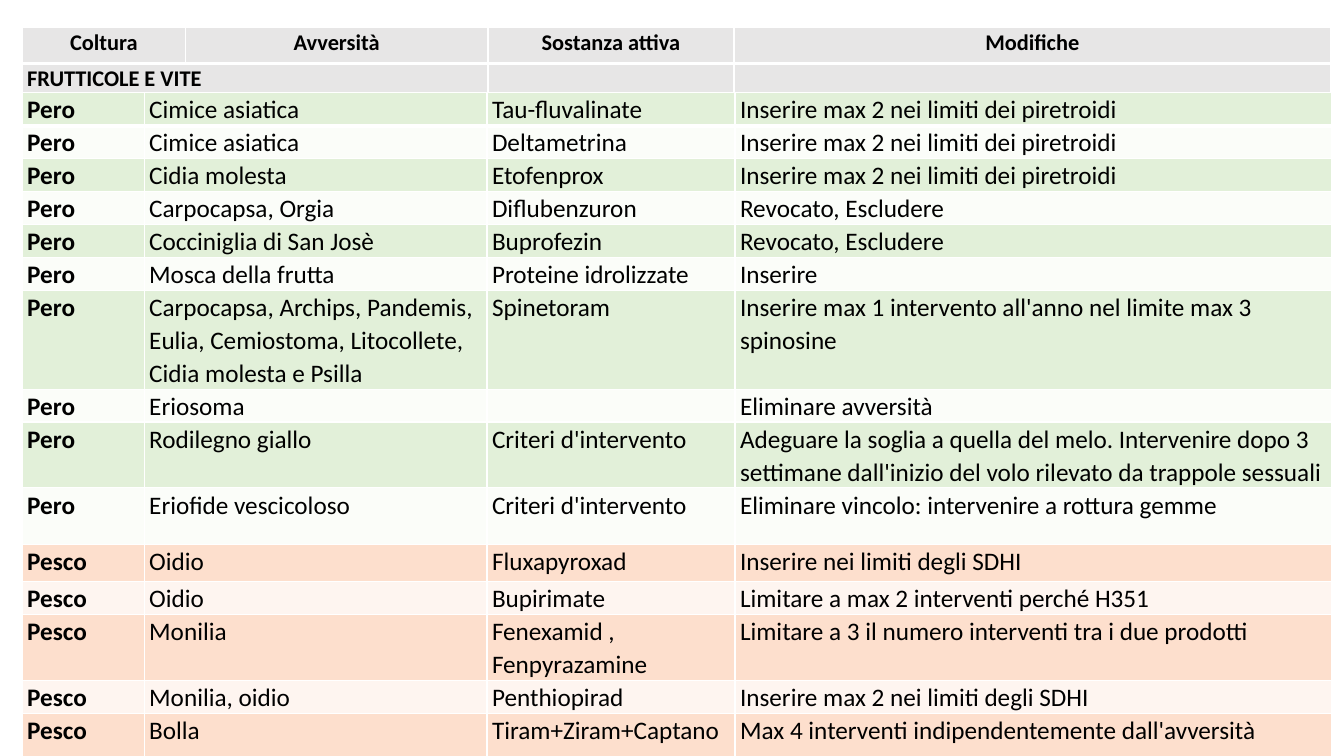
from lxml import etree
from pptx import Presentation
from pptx.dml.color import RGBColor
from pptx.enum.text import MSO_ANCHOR as Anchor, PP_ALIGN as Align
from pptx.oxml.ns import qn
from pptx.util import Inches, Pt

BLACK = RGBColor(0x00, 0x00, 0x00)
WHITE = RGBColor(0xFF, 0xFF, 0xFF)
GREY = RGBColor(0xE7, 0xE6, 0xE6)
# Dark and light band of each crop
BANDS = {
    "Pero": (RGBColor(0xE2, 0xF0, 0xD9), RGBColor(0xFB, 0xFD, 0xF9)),
    "Pesco": (RGBColor(0xFD, 0xDF, 0xCD), RGBColor(0xFE, 0xF5, 0xF0)),
}
FONT = "Calibri"

HEAD = [
    ("Coltura", "Avversità", "Sostanza attiva", "Modifiche"),
    ("FRUTTICOLE E VITE", "", "", ""),
]
HEAD_COLS = [1.62, 3, 2.44, 5.92]
HEAD_ROWS = [0.36, 0.24]

PYR = "Inserire max 2 nei limiti dei piretroidi"
OUT = "Revocato, Escludere"
RULE = "Criteri d'intervento"
# Row height, pest, active substance, change
CROPS = {
    "Pero": [
        (0.26, "Cimice asiatica", "Tau-fluvalinate", PYR),
        (0.26, "Cimice asiatica", "Deltametrina", PYR),
        (0.26, "Cidia molesta", "Etofenprox", PYR),
        (0.26, "Carpocapsa, Orgia", "Diflubenzuron", OUT),
        (0.26, "Cocciniglia di San Josè", "Buprofezin", OUT),
        (0.26, "Mosca della frutta", "Proteine idrolizzate", "Inserire"),
        (0.41, "Carpocapsa, Archips, Pandemis, Eulia, Cemiostoma, "
         "Litocollete, Cidia molesta e Psilla", "Spinetoram",
         "Inserire max 1 intervento all'anno nel limite max 3 spinosine"),
        (0.26, "Eriosoma", "", "Eliminare avversità"),
        (0.56, "Rodilegno giallo", RULE,
         "Adeguare la soglia a quella del melo. Intervenire dopo 3 settimane "
         "dall'inizio del volo rilevato da trappole sessuali"),
        (0.56, "Eriofide vescicoloso", RULE,
         "Eliminare vincolo: intervenire a rottura gemme"),
    ],
    "Pesco": [
        (0.37, "Oidio", "Fluxapyroxad", "Inserire nei limiti degli SDHI"),
        (0.26, "Oidio", "Bupirimate", "Limitare a max 2 interventi perché H351"),
        (0.5, "Monilia", "Fenexamid , Fenpyrazamine",
         "Limitare a 3 il numero interventi tra i due prodotti"),
        (0.26, "Monilia, oidio", "Penthiopirad",
         "Inserire max 2 nei limiti degli SDHI"),
        (0.5, "Bolla", "Tiram+Ziram+Captano",
         "Max 4 interventi indipendentemente dall'avversità"),
    ],
}
CROP_COLS = [1.21, 3.4, 2.46, 5.92]


def add_lines(cell, base):
    """Draw white edges; base is the width of the bottom one."""
    props = cell._tc.get_or_add_tcPr()
    for i, (side, width) in enumerate(zip("LRTB", (1, 1, 1, base))):
        line = etree.Element(qn(f"a:ln{side}"), w=str(Pt(width)))
        fill = etree.SubElement(line, qn("a:solidFill"))
        etree.SubElement(fill, qn("a:srgbClr"), val=str(WHITE))
        props.insert(i, line)


def set_cell(cell, text, fill, size, bold, base):
    cell.fill.solid()
    cell.fill.fore_color.rgb = fill
    add_lines(cell, base)
    cell.margin_left = cell.margin_right = Inches(0.05)
    cell.margin_top = cell.margin_bottom = 0
    para = cell.text_frame.paragraphs[0]
    para.text = text
    para.line_spacing = 1.07
    for run in para.runs:
        font = run.font
        font.name, font.size, font.bold = FONT, Pt(size), bold
        font.color.rgb = BLACK
    if not text:
        # Keep an empty cell as low as its row
        etree.SubElement(para._p, qn("a:endParaRPr"), sz=str(size * 100))


def add_grid(slide, left, top, cols, rows):
    frame = slide.shapes.add_table(
        len(rows), len(cols), Inches(left), Inches(top),
        Inches(sum(cols)), Inches(sum(rows)))
    table = frame.table
    table.first_row = table.horz_banding = False
    for col, width in zip(table.columns, cols):
        col.width = Inches(width)
    for row, height in zip(table.rows, rows):
        row.height = Inches(height)
    return table


def add_head(slide, left, top):
    table = add_grid(slide, left, top, HEAD_COLS, HEAD_ROWS)
    for r, row in enumerate(HEAD):
        for c, text in enumerate(row):
            cell = table.cell(r, c)
            set_cell(cell, text, GREY, 16, True, 1 if r else 3)
            if r == 0:
                cell.text_frame.paragraphs[0].alignment = Align.CENTER
    group = table.cell(1, 0)
    group.vertical_anchor = Anchor.BOTTOM
    group.merge(table.cell(1, 1))


def add_crops(slide, left, top):
    rows = [(crop, *row) for crop, part in CROPS.items() for row in part]
    table = add_grid(slide, left, top, CROP_COLS, [row[1] for row in rows])
    for r, (crop, _, *texts) in enumerate(rows):
        for c, text in enumerate((crop, *texts)):
            set_cell(table.cell(r, c), text, BANDS[crop][r % 2], 18,
                     c == 0, 1 if r else 3)


def main():
    deck = Presentation()
    deck.slide_width, deck.slide_height = Inches(13.33), Inches(7.5)
    slide = deck.slides.add_slide(deck.slide_layouts[6])
    # Column titles, then the crops below them
    add_head(slide, 0.22, 0.27)
    add_crops(slide, 0.22, 0.92)
    deck.save("out.pptx")


if __name__ == "__main__":
    main()
